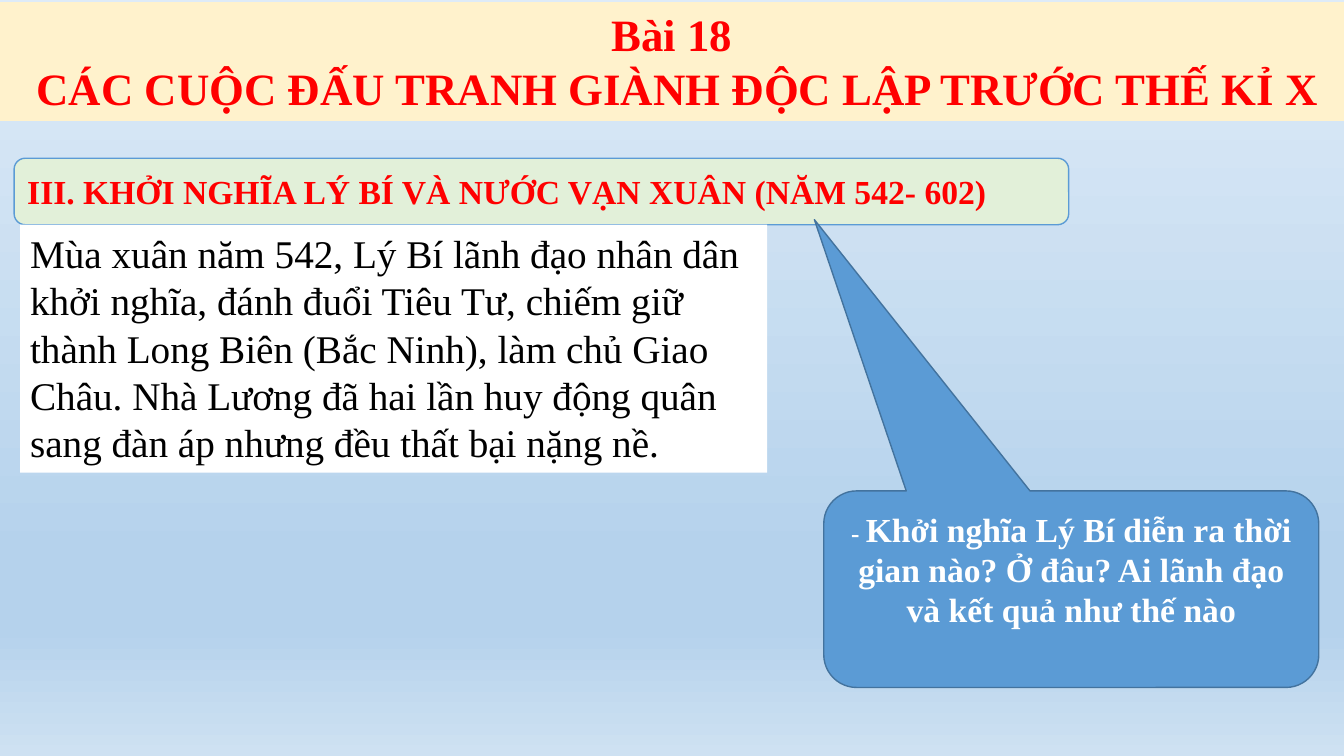
from lxml.etree import SubElement
from pptx import Presentation
from pptx.dml.color import RGBColor
from pptx.enum.shapes import MSO_SHAPE as Shape
from pptx.enum.text import MSO_ANCHOR as Anchor, PP_ALIGN as Align
from pptx.oxml.ns import qn
from pptx.util import Inches, Pt

WIDTH, HEIGHT = 13.33, 7.5
FONT = "Times New Roman"
SKY = [(0, "DEEBF7"), (74, "B5D2EC"), (83, "B5D2EC"), (100, "CEE1F2")]


def color(code):
    return RGBColor.from_string(code)


def paint_background(page, stops):
    fill = page.background.fill
    fill.gradient()
    fill.gradient_angle = 270
    stop_list = next(page.element.iter(qn("a:gsLst")))
    for stop in list(stop_list):
        stop_list.remove(stop)
    for percent, code in stops:
        stop = SubElement(stop_list, qn("a:gs"), pos=str(percent * 1000))
        SubElement(stop, qn("a:srgbClr"), val=code)


def add_box(page, kind, left, top, width, height, fill, line=None, adjust=()):
    box = page.shapes.add_shape(
        kind, Inches(left), Inches(top), Inches(width), Inches(height))
    box.shadow.inherit = False
    box.fill.solid()
    box.fill.fore_color.rgb = color(fill)
    if line:
        box.line.color.rgb = color(line)
        box.line.width = Pt(1)
    else:
        box.line.fill.background()
    for index, value in enumerate(adjust):
        box.adjustments[index] = value
    return box


def write(box, paragraphs, ink="FF0000", bold=True, align=Align.LEFT,
          anchor=Anchor.TOP, bottom=0.05):
    frame = box.text_frame
    frame.word_wrap = True
    frame.vertical_anchor = anchor
    frame.margin_bottom = Inches(bottom)
    for index, spans in enumerate(paragraphs):
        para = frame.add_paragraph() if index else frame.paragraphs[0]
        para.alignment = align
        for text, size in spans:
            span = para.add_run()
            span.text = text
            span.font.name = FONT
            span.font.size = Pt(size)
            span.font.bold = bold
            span.font.color.rgb = color(ink)


def main():
    deck = Presentation()
    deck.slide_width, deck.slide_height = Inches(WIDTH), Inches(HEIGHT)
    page = deck.slides.add_slide(deck.slide_layouts[6])
    paint_background(page, SKY)

    title = add_box(page, Shape.RECTANGLE, 0, 0.02, WIDTH, 1.18, "FFF2CC")
    write(title, [[("Bài 18", 32)],
                  [(" CÁC CUỘC ĐẤU TRANH GIÀNH ĐỘC LẬP TRƯỚC THẾ KỈ X", 32)]],
          align=Align.CENTER)

    heading = add_box(page, Shape.ROUNDED_RECTANGLE, 0.14, 1.57, 10.46, 0.66,
                      "E2F0D9", line="5B9BD5")
    write(heading,
          [[("III. KHỞI NGHĨA LÝ BÍ VÀ NƯỚC VẠN XUÂN (NĂM 542- 602)", 24)]],
          anchor=Anchor.MIDDLE)

    question = add_box(page, Shape.ROUNDED_RECTANGULAR_CALLOUT,
                       8.17, 4.87, 4.91, 1.95, "5B9BD5", line="43739E",
                       adjust=(-0.519, -1.88, 0.167))
    write(question,
          [[("- ", 18), ("Khởi nghĩa Lý Bí diễn ra thời gian nào? Ở đâu? "
                         "Ai lãnh đạo và kết quả như thế nào", 24)]],
          ink="FFFFFF", align=Align.CENTER, anchor=Anchor.MIDDLE, bottom=0.45)

    story = add_box(page, Shape.RECTANGLE, 0.2, 2.23, 7.41, 2.46, "FFFFFF")
    write(story,
          [[("Mùa xuân năm 542, Lý Bí lãnh đạo nhân dân khởi nghĩa, đánh đuổi "
             "Tiêu Tư, chiếm giữ thành Long Biên (Bắc Ninh), làm chủ Giao Châu. "
             "Nhà Lương đã hai lần huy động quân sang đàn áp nhưng đều thất bại "
             "nặng nề.", 28)]],
          ink="000000", bold=False)

    deck.save("out.pptx")


if __name__ == "__main__":
    main()
